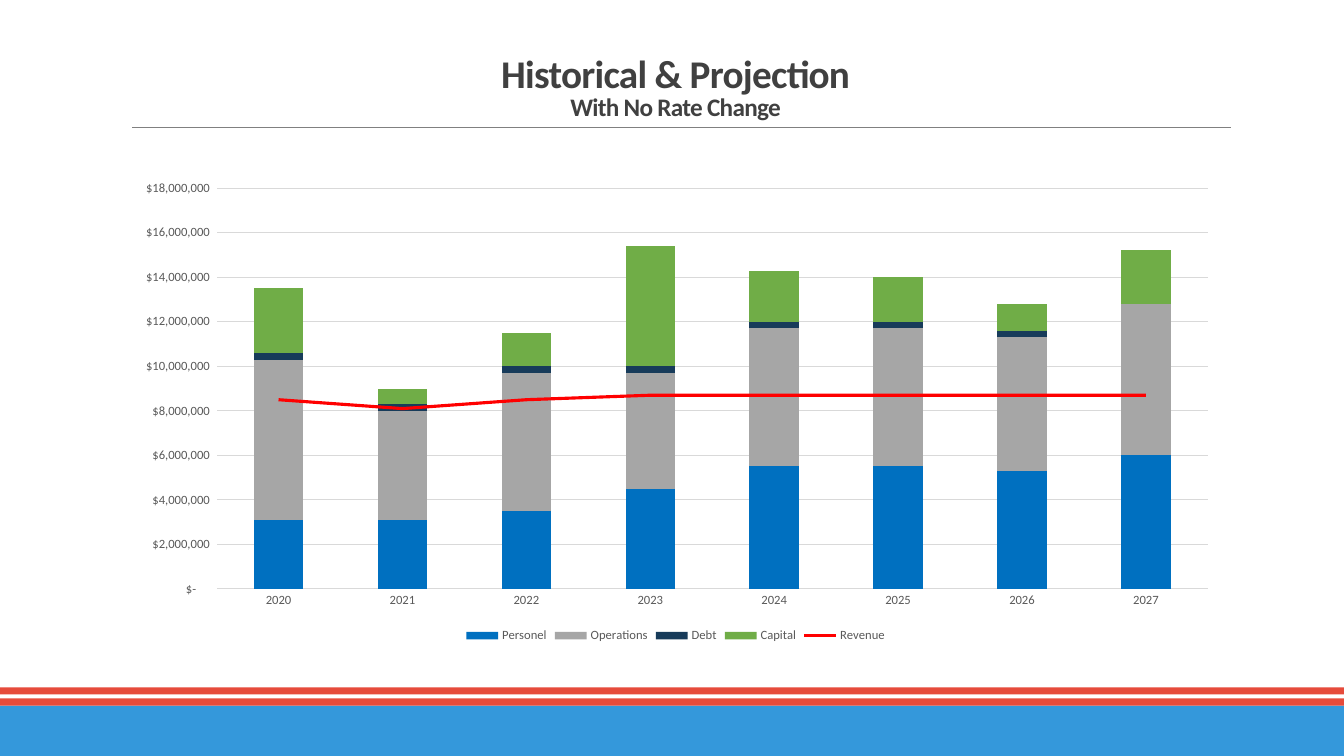
from lxml.etree import SubElement
from pptx import Presentation
from pptx.chart.data import CategoryChartData
from pptx.dml.color import RGBColor
from pptx.enum.chart import XL_CHART_TYPE, XL_LEGEND_POSITION, XL_MARKER_STYLE, XL_TICK_MARK
from pptx.enum.shapes import MSO_CONNECTOR, MSO_SHAPE
from pptx.enum.text import MSO_ANCHOR, MSO_AUTO_SIZE, PP_ALIGN
from pptx.oxml.ns import qn
from pptx.util import Inches, Pt

FONT = "Calibri"
TITLE = [("Historical & Projection", 28), ("With No Rate Change", 18)]
BANDS = [(7, 0.5, "3498DB"), (6.93, 0.07, "E64B3B"), (6.82, 0.07, "E64B3B")]
YEARS = [str(year) for year in range(2020, 2028)]
# Dollars in millions
COSTS = [
    ("Personel", "0070C0", (3.1, 3.1, 3.5, 4.5, 5.5, 5.5, 5.3, 6.0)),
    ("Operations", "A6A6A6", (7.2, 4.9, 6.2, 5.2, 6.2, 6.2, 6.0, 6.8)),
    ("Debt", "173B5A", (0.3, 0.3, 0.3, 0.3, 0.3, 0.3, 0.3, 0)),
    ("Capital", "70AD47", (2.9, 0.7, 1.5, 5.4, 2.3, 2.0, 1.2, 2.4)),
]
REVENUE = ("Revenue", "FF0000", (8.5, 8.1, 8.5, 8.7, 8.7, 8.7, 8.7, 8.7))
MONEY = r'_("$"* #,##0_);_("$"* \(#,##0\);_("$"* "-"??_);_(@_)'


def paint(part, color):
    """Give a fill or a line one solid colour."""
    fill = part if hasattr(part, "solid") else part.fill
    fill.solid()
    fill.fore_color.rgb = RGBColor.from_string(color)


def style(font, size, color):
    font.name = FONT
    font.size = Pt(size)
    font.color.rgb = RGBColor.from_string(color)


def add_bands(slide):
    for top, height, color in BANDS:
        band = slide.shapes.add_shape(
            MSO_SHAPE.RECTANGLE, 0, Inches(top), Inches(13.33), Inches(height))
        band.shadow.inherit = False
        paint(band.fill, color)
        band.line.fill.background()


def add_rule(slide):
    rule = slide.shapes.add_connector(
        MSO_CONNECTOR.STRAIGHT, Inches(1.31), Inches(1.26), Inches(12.21), Inches(1.26))
    paint(rule.line, "808080")
    rule.line.width = Pt(0.5)
    SubElement(rule._element.spPr, qn("a:effectLst"))


def set_title(slide):
    title = slide.shapes.title
    title.left, title.top = Inches(1.2), Inches(0.31)
    title.width, title.height = Inches(11), Inches(0.95)
    frame = title.text_frame
    frame.word_wrap = True
    frame.auto_size = MSO_AUTO_SIZE.NONE
    frame.vertical_anchor = MSO_ANCHOR.BOTTOM
    para = frame.paragraphs[0]
    para.alignment = PP_ALIGN.CENTER
    para.line_spacing = 0.85
    for row, (text, size) in enumerate(TITLE):
        if row:
            para.add_line_break()
        run = para.add_run()
        run.text = text
        style(run.font, size, "404040")
        run.font.bold = True
        run._r.get_or_add_rPr().set("spc", "-50")


def split_line(chart):
    """Move the last bar series into a line plot on the same axes."""
    bars = chart.plots[0]._element
    series = bars.findall(qn("c:ser"))[-1]
    line = bars.makeelement(qn("c:lineChart"))
    SubElement(line, qn("c:grouping")).set("val", "standard")
    SubElement(line, qn("c:varyColors")).set("val", "0")
    for flag in series.findall(qn("c:invertIfNegative")):
        series.remove(flag)
    line.append(series)
    SubElement(line, qn("c:marker")).set("val", "1")
    for axis in bars.findall(qn("c:axId")):
        SubElement(line, qn("c:axId")).set("val", axis.get("val"))
    bars.addnext(line)


def add_chart(slide):
    data = CategoryChartData(number_format=MONEY)
    data.categories = YEARS
    for name, _, values in COSTS + [REVENUE]:
        data.add_series(name, [round(value * 1_000_000) for value in values])
    chart = slide.shapes.add_chart(
        XL_CHART_TYPE.COLUMN_STACKED, Inches(1.2), Inches(1.7),
        Inches(11), Inches(4.72), data).chart
    style(chart.font, 10, "000000")
    chart.has_title = False
    split_line(chart)

    bars, line = chart.plots
    bars.gap_width, bars.overlap = 150, 100
    bars.vary_by_categories = False
    for series, (_, color, _) in zip(bars.series, COSTS):
        paint(series.format.fill, color)
    trend = line.series[0]
    paint(trend.format.line, REVENUE[1])
    trend.format.line.width = Pt(2.25)
    trend.marker.style = XL_MARKER_STYLE.NONE
    trend.smooth = False

    for axis in (chart.category_axis, chart.value_axis):
        axis.major_tick_mark = axis.minor_tick_mark = XL_TICK_MARK.NONE
        axis.format.line.fill.background()
        style(axis.tick_labels.font, 9, "595959")
    scale = chart.value_axis
    scale.minimum_scale, scale.maximum_scale = 0, 18_000_000
    scale.major_unit = 2_000_000
    scale.tick_labels.number_format = MONEY
    scale.tick_labels.number_format_is_linked = False
    grid = scale.major_gridlines.format.line
    paint(grid, "D9D9D9")
    grid.width = Pt(0.75)

    chart.has_legend = True
    chart.legend.position = XL_LEGEND_POSITION.BOTTOM
    chart.legend.include_in_layout = False
    style(chart.legend.font, 9, "595959")


def main():
    deck = Presentation()
    deck.slide_width, deck.slide_height = Inches(13.33), Inches(7.5)
    slide = deck.slides.add_slide(deck.slide_layouts[5])
    add_bands(slide)
    add_rule(slide)
    set_title(slide)
    add_chart(slide)
    deck.save("out.pptx")


if __name__ == "__main__":
    main()
